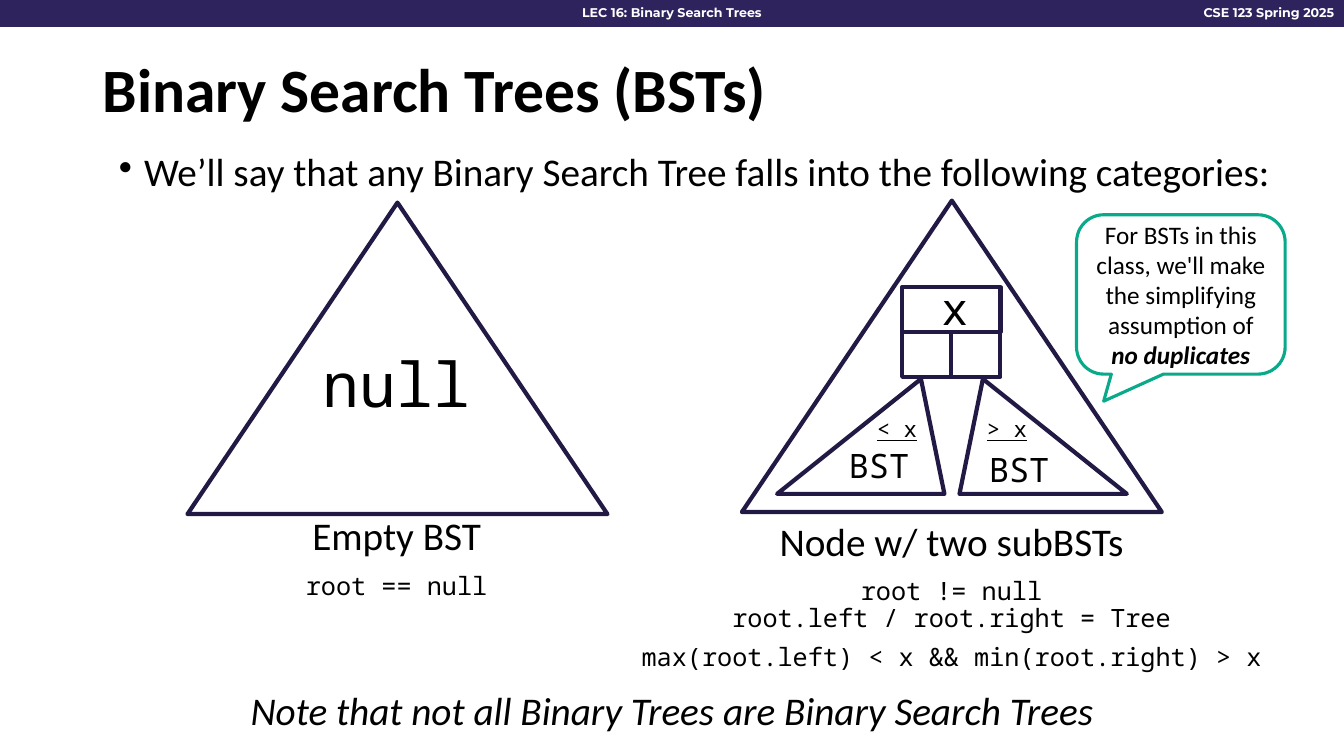
from dataclasses import dataclass

import lxml.etree
import pptx
import pptx.dml.color
import pptx.enum.shapes
import pptx.enum.text
import pptx.oxml.ns
import pptx.util

Pt = pptx.util.Pt
Kind = pptx.enum.shapes.MSO_SHAPE
Align = pptx.enum.text.PP_ALIGN
Anchor = pptx.enum.text.MSO_ANCHOR

SANS, MONO, HEADER = "Calibri", "Noto Sans Mono", "Montserrat"
BLACK, WHITE, NAVY, PURPLE, GREEN = "000000", "FFFFFF", "221A45", "2E235D", "09A98A"


@dataclass
class Line:
    text: str
    size: float
    font: str = SANS
    color: str = BLACK
    align: Align = Align.CENTER
    bold: bool = False
    italic: bool = False
    underline: bool = False
    spacing: float = 1.0
    before: float = 0
    bullet: bool = False
    emphasis: str = ""


@dataclass
class TextBlock:
    left: float
    top: float
    width: float
    height: float
    lines: list[Line]
    anchor: Anchor = Anchor.TOP
    wrap: bool = True


@dataclass
class Outline:
    kind: Kind
    left: float
    top: float
    width: float
    height: float
    adjustments: tuple[float, ...] = ()
    fill: str = ""
    color: str = NAVY
    weight: float = 3


def rgb(value: str) -> pptx.dml.color.RGBColor:
    return pptx.dml.color.RGBColor.from_string(value)


def add_bullet(paragraph) -> None:
    properties = paragraph._p.get_or_add_pPr()
    properties.set("marL", str(Pt(18)))
    properties.set("indent", str(Pt(-18)))
    bullet = lxml.etree.SubElement(properties, pptx.oxml.ns.qn("a:buChar"))
    bullet.set("char", "•")


def write_line(paragraph, line: Line) -> None:
    if line.bullet:
        add_bullet(paragraph)
    paragraph.alignment = line.align
    paragraph.line_spacing = line.spacing
    paragraph.space_before = Pt(line.before)
    paragraph.font.name = line.font
    paragraph.font.size = Pt(line.size)
    paragraph.font.color.rgb = rgb(line.color)
    paragraph.font.bold = line.bold
    paragraph.font.italic = line.italic
    paragraph.font.underline = line.underline
    paragraph.add_run().text = line.text
    if line.emphasis:
        run = paragraph.add_run()
        run.text = line.emphasis
        run.font.bold = run.font.italic = True


def write_lines(frame, lines: list[Line]) -> None:
    for index, line in enumerate(lines):
        write_line(frame.add_paragraph() if index else frame.paragraphs[0], line)


def draw_text(slide, block: TextBlock) -> None:
    box = slide.shapes.add_textbox(
        Pt(block.left), Pt(block.top), Pt(block.width), Pt(block.height))
    box.text_frame.word_wrap = block.wrap
    box.text_frame.vertical_anchor = block.anchor
    write_lines(box.text_frame, block.lines)


def draw_outline(slide, outline: Outline):
    shape = slide.shapes.add_shape(
        outline.kind, Pt(outline.left), Pt(outline.top), Pt(outline.width), Pt(outline.height))
    shape.shadow.inherit = False
    for index, value in enumerate(outline.adjustments):
        shape.adjustments[index] = value
    if outline.fill:
        shape.fill.solid()
        shape.fill.fore_color.rgb = rgb(outline.fill)
    else:
        shape.fill.background()
    shape.line.color.rgb = rgb(outline.color)
    shape.line.width = Pt(outline.weight)
    return shape


def body(text: str, **options) -> Line:
    return Line(text, 28, spacing=0.9, **options)


def code(text: str, before: float = 0) -> Line:
    return Line(text, 18, MONO, spacing=0.9, before=before)


def header(text: str, align: Align) -> Line:
    return Line(text, 9, HEADER, WHITE, align, bold=True)


def tree_label(left: float, top: float, width: float, height: float, text: str,
               size: float, underline: bool = False, wrap: bool = True) -> TextBlock:
    return TextBlock(left, top, width, height,
                     [Line(text, size, MONO, underline=underline)], wrap=wrap)


HEADER_BAR = Outline(Kind.RECTANGLE, 0, 0, 960, 18.7, fill=PURPLE, color=PURPLE, weight=1)

CELL_LEFT, CELL_TOP, CELL_WIDTH, CELL_HEIGHT = 644.4, 205.2, 35.1, 32
APEX = 0.14
TREE_OUTLINES = [
    Outline(Kind.RECTANGLE, CELL_LEFT, CELL_TOP, 2 * CELL_WIDTH, CELL_HEIGHT),
    *(Outline(Kind.RECTANGLE, CELL_LEFT + column * CELL_WIDTH, CELL_TOP + CELL_HEIGHT,
              CELL_WIDTH, CELL_HEIGHT) for column in range(2)),
    *(Outline(Kind.ISOSCELES_TRIANGLE, left, top, 300, 222.5)
      for left, top in ((133.9, 144.7), (529.9, 143.3))),
    *(Outline(Kind.ISOSCELES_TRIANGLE, left, 270.7, 119.5, 82.1, (apex,))
      for left, apex in ((555.1, 1 - APEX), (685.4, APEX))),
]

CALLOUT = Outline(Kind.ROUNDED_RECTANGULAR_CALLOUT, 769, 153.4, 149, 113.8,
                  (-0.37, 0.67, 0.17), WHITE, GREEN, 2.25)
CALLOUT_LINE = Line("For BSTs in this class, we'll make the simplifying assumption of ", 18,
                    emphasis="no duplicates")

TEXT_BLOCKS = [
    TextBlock(832.3, 0, 127.7, 18, [header("CSE 123 Spring 2025", Align.RIGHT)]),
    TextBlock(236.2, 0, 487.4, 18, [header("LEC 16: Binary Search Trees", Align.CENTER)]),
    TextBlock(66.2, 36, 828, 59.8,
              [Line("Binary Search Trees (BSTs)", 44, align=Align.LEFT, bold=True, spacing=0.9)],
              Anchor.MIDDLE),
    TextBlock(77.8, 105.8, 853.2, 40, [
        body("We’ll say that any Binary Search Tree falls into the following categories:",
             align=Align.LEFT, bullet=True)]),
    TextBlock(109.4, 365.8, 347.8, 108, [body("Empty BST"), code("root == null", 10)]),
    TextBlock(450.7, 369.4, 457.9, 120, [
        body("Node w/ two subBSTs"),
        code("root != null", 10),
        code("root.left / root.right = Tree"),
        code("max(root.left) < x && min(root.right) > x", 8.6)]),
    TextBlock(53.3, 490.3, 853.2, 46,
              [body("Note that not all Binary Trees are Binary Search Trees", italic=True)]),
    tree_label(187.2, 243.4, 192.2, 60.5, "null", 44),
    tree_label(665.3, 196.6, 32.4, 46, "x", 32, wrap=False),
    tree_label(546.5, 314.6, 162.7, 36, "BST", 24),
    tree_label(646.6, 316.8, 162.7, 36, "BST", 24),
    tree_label(559.4, 293, 162.7, 26.6, "< x", 16, underline=True),
    tree_label(637.9, 293, 162.7, 26.6, "> x", 16, underline=True),
]


def main() -> None:
    presentation = pptx.Presentation()
    presentation.slide_width, presentation.slide_height = Pt(960), Pt(540)
    slide = presentation.slides.add_slide(presentation.slide_layouts[6])
    for outline in [HEADER_BAR, *TREE_OUTLINES]:
        draw_outline(slide, outline)
    for block in TEXT_BLOCKS:
        draw_text(slide, block)
    callout = draw_outline(slide, CALLOUT)
    callout.text_frame.word_wrap = True
    callout.text_frame.vertical_anchor = Anchor.MIDDLE
    write_lines(callout.text_frame, [CALLOUT_LINE])
    presentation.save("out.pptx")


if __name__ == "__main__":
    main()
